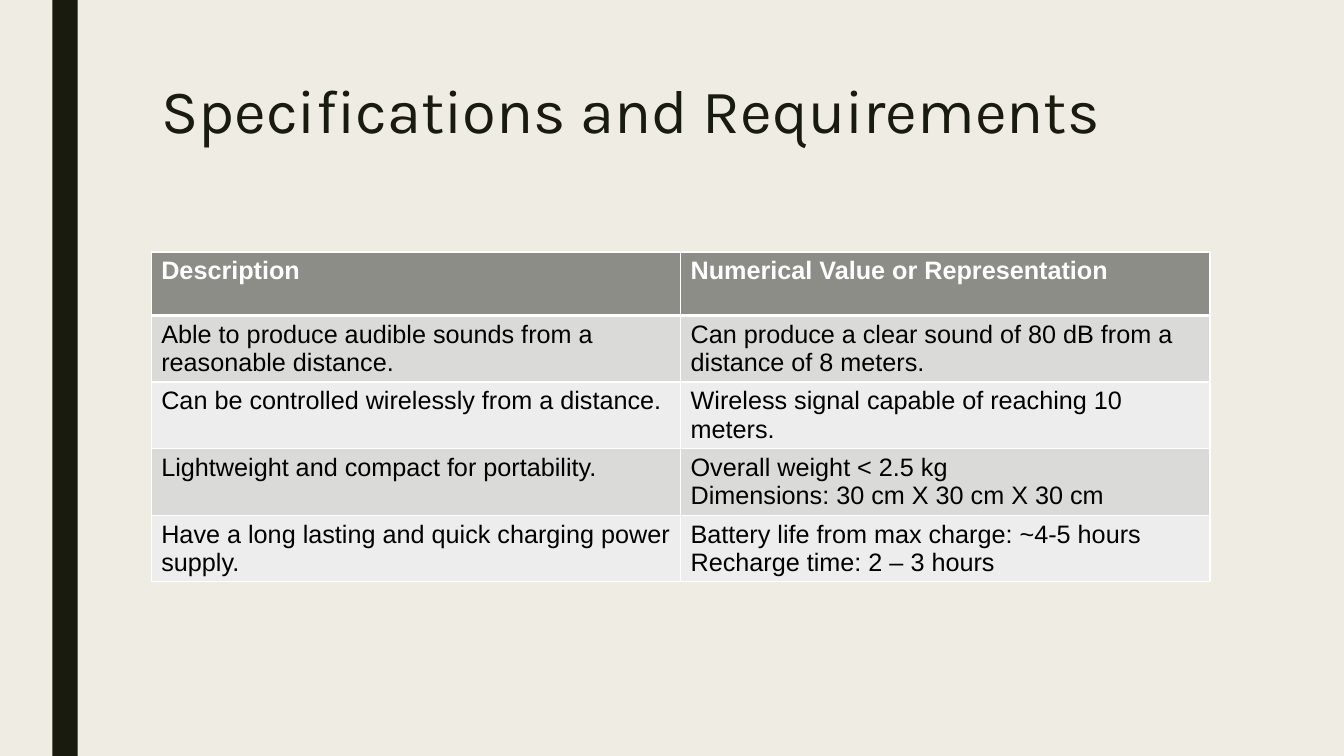
from dataclasses import dataclass

from lxml.etree import SubElement
from pptx import Presentation
from pptx.dml.color import RGBColor
from pptx.enum.shapes import MSO_SHAPE
from pptx.enum.text import MSO_ANCHOR, MSO_AUTO_SIZE, PP_ALIGN
from pptx.oxml.ns import qn
from pptx.slide import Slide
from pptx.table import _Cell as Cell
from pptx.util import Inches, Pt


@dataclass(frozen=True)
class Theme:
    background: str = "EFEDE3"
    dark: str = "191B0E"
    header: str = "8C8D86"
    bands: tuple[str, str] = ("DADAD8", "EDEDED")
    white: str = "FFFFFF"
    black: str = "000000"
    title_font: str = "Karla"
    body_font: str = "Arial"
    title_size: int = 44
    body_size: int = 18


@dataclass(frozen=True)
class Requirement:
    description: str
    value: str


THEME = Theme()
HEADER = Requirement("Description", "Numerical Value or Representation")
REQUIREMENTS = [
    Requirement("Able to produce audible sounds from a reasonable distance.",
                "Can produce a clear sound of 80 dB from a distance of 8 meters."),
    Requirement("Can be controlled wirelessly from a distance.",
                "Wireless signal capable of reaching 10 meters."),
    Requirement("Lightweight and compact for portability.",
                "Overall weight < 2.5 kg\nDimensions: 30 cm X 30 cm X 30 cm"),
    Requirement("Have a long lasting and quick charging power supply.",
                "Battery life from max charge: ~4-5 hours\nRecharge time: 2 – 3 hours"),
]


def rgb(color: str) -> RGBColor:
    return RGBColor.from_string(color)


def set_borders(cell: Cell, bottom: float, top: float) -> None:
    """Draw white borders, placed before the cell fill as the schema asks."""
    tc_pr = cell._tc.get_or_add_tcPr()
    widths = {"a:lnL": 1, "a:lnR": 1, "a:lnT": top, "a:lnB": bottom}
    for i, (tag, width) in enumerate(widths.items()):
        ln = SubElement(tc_pr, qn(tag), w=str(Pt(width)))
        fill = SubElement(ln, qn("a:solidFill"))
        SubElement(fill, qn("a:srgbClr"), val=THEME.white)
        tc_pr.insert(i, ln)


def fill_cell(cell: Cell, text: str, row: int) -> None:
    is_header = row == 0
    cell.text = text
    cell.fill.solid()
    cell.fill.fore_color.rgb = rgb(THEME.header if is_header else THEME.bands[(row - 1) % 2])
    set_borders(cell, bottom=3 if is_header else 1, top=3 if row == 1 else 1)
    for p in cell.text_frame.paragraphs:
        p.font.name = THEME.body_font
        p.font.size = Pt(THEME.body_size)
        p.font.bold = is_header
        p.font.color.rgb = rgb(THEME.white if is_header else THEME.black)


def add_side_bar(s: Slide) -> None:
    bar = s.shapes.add_shape(MSO_SHAPE.RECTANGLE, Inches(0.52), 0, Inches(0.25), Inches(7.5))
    bar.shadow.inherit = False
    bar.fill.solid()
    bar.fill.fore_color.rgb = rgb(THEME.dark)
    bar.line.fill.background()


def format_title(s: Slide, text: str) -> None:
    title = s.shapes.title
    title.left, title.top = Inches(1.5), Inches(0.75)
    title.width, title.height = Inches(10.5), Inches(1.62)
    tf = title.text_frame
    tf.text = text
    tf.word_wrap = True
    tf.auto_size = MSO_AUTO_SIZE.NONE
    tf.vertical_anchor = MSO_ANCHOR.TOP
    p = tf.paragraphs[0]
    p.alignment = PP_ALIGN.LEFT
    p.line_spacing = 0.89
    p.font.name = THEME.title_font
    p.font.size = Pt(THEME.title_size)
    p.font.color.rgb = rgb(THEME.dark)


def add_requirements_table(s: Slide, entries: list[Requirement]) -> None:
    row_height = Inches(0.63)
    table = s.shapes.add_table(len(entries), 2, Inches(1.5), Inches(2.5),
                               Inches(10.5), row_height * len(entries)).table
    for i, entry in enumerate(entries):
        table.rows[i].height = row_height
        fill_cell(table.cell(i, 0), entry.description, i)
        fill_cell(table.cell(i, 1), entry.value, i)


def main() -> None:
    prs = Presentation()
    prs.slide_width, prs.slide_height = Inches(13.33), Inches(7.5)
    s = prs.slides.add_slide(prs.slide_layouts[5])

    # Background and side bar
    s.background.fill.solid()
    s.background.fill.fore_color.rgb = rgb(THEME.background)
    add_side_bar(s)

    # Title and table
    format_title(s, "Specifications and Requirements")
    add_requirements_table(s, [HEADER, *REQUIREMENTS])

    prs.save("out.pptx")


if __name__ == "__main__":
    main()
